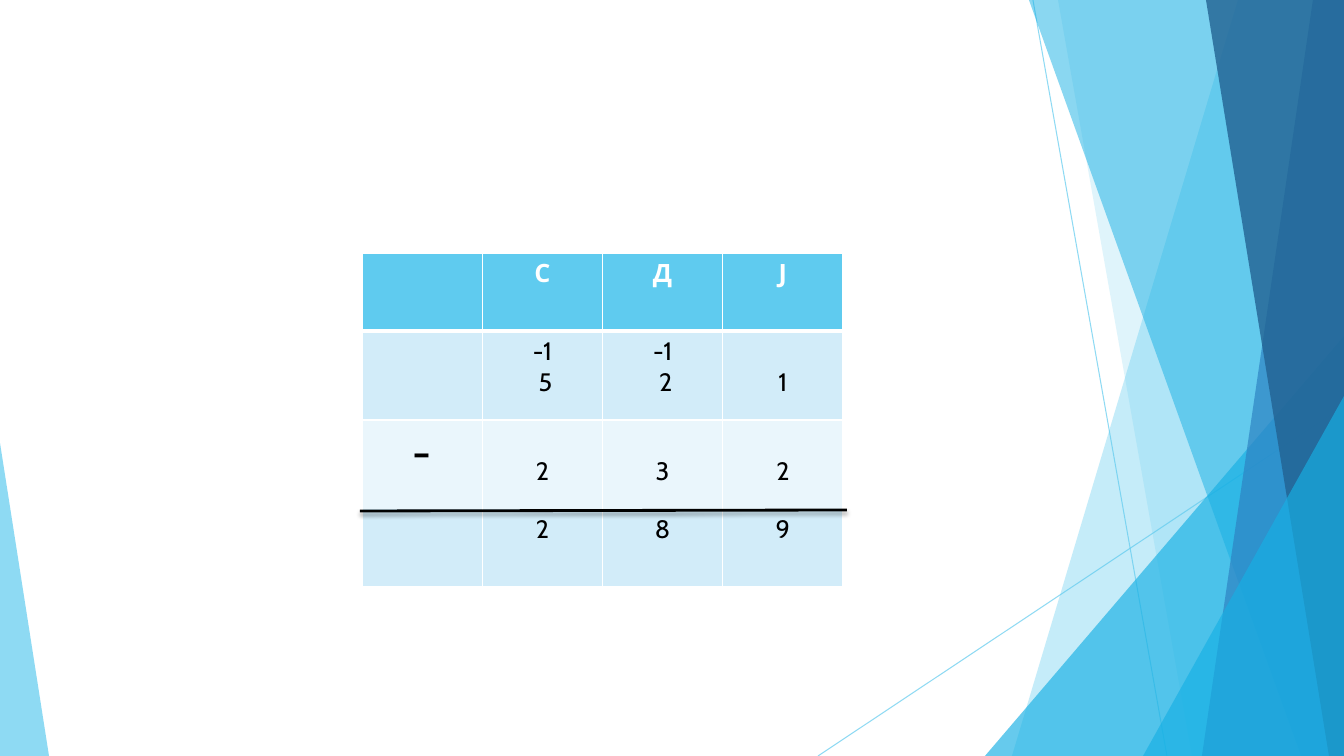
from pptx import Presentation
from pptx.dml.color import RGBColor
from pptx.enum.shapes import MSO_CONNECTOR, MSO_SHAPE
from pptx.enum.text import PP_ALIGN
from pptx.oxml import parse_xml
from pptx.oxml.ns import nsdecls, qn
from pptx.util import Pt
from lxml.etree import SubElement

SCALE = 12192000 / 1344
WIDTH, HEIGHT = 1344, 756
FONT = "Cabin"
COLORS = {
    "sky": "5FCBEF", "cyan": "17B0E4", "blue": "2E83C3", "navy": "226292",
    "band_dark": "D2ECF9", "band_light": "EAF6FC",
    "white": "FFFFFF", "black": "000000",
}

# Facets from back to front: kind, x and y (or top x and bottom x), colour, opacity
FACETS = [
    ("band", 420, 194, "sky", 36),
    ("band", 240, 374, "sky", 20),
    ("triangle", 167, 336, "cyan", 66),
    ("band", 211, 483, "cyan", 50),
    ("band", 495, 384, "blue", 70),
    ("band", 388, 511, "navy", 80),
    ("triangle", 325, 396, "cyan", 66),
]

HEADERS = ["", "С", "Д", "Ј"]
# Each number row: sign, digits, borrowed units, height, fill, lowered by one line
ROWS = [
    (HEADERS, [], 78, "sky", False),
    (["", "5", "2", "1"], ["", "-1", "-1", ""], 89, "band_dark", True),
    (["-", "2", "3", "2"], [], 89, "band_light", True),
    (["", "2", "8", "9"], [], 78, "band_dark", False),
]
# Border widths in points: left, right, top, bottom
BORDERS = [(1, 1, 1, 3), (1, 1, 1, 1), (1, 1, 1, 0), (1, 1, 0, 1)]
LINE_HEIGHT = 31


def px(length):
    return round(length * SCALE)


def rgb(name):
    return RGBColor.from_string(COLORS[name])


def set_opacity(fill_parent, percent):
    color = fill_parent.find(qn("a:solidFill"))[0]
    SubElement(color, qn("a:alpha")).set("val", str(percent * 1000))


def paint(shape, color, opacity):
    shape.shadow.inherit = False
    shape.fill.solid()
    shape.fill.fore_color.rgb = rgb(color)
    set_opacity(shape._element.spPr, opacity)
    shape.line.fill.background()


def add_line(slide, start, end, color, width):
    line = slide.shapes.add_connector(
        MSO_CONNECTOR.STRAIGHT, *map(px, start), *map(px, end))
    line.line.color.rgb = rgb(color)
    line.line.width = Pt(width)
    effects = SubElement(line._element.spPr, qn("a:effectLst"))
    return line, effects


def add_triangle(slide, left, top, width, height, apex, color, opacity):
    triangle = slide.shapes.add_shape(
        MSO_SHAPE.ISOSCELES_TRIANGLE, *map(px, (left, top, width, height)))
    triangle.adjustments[0] = apex
    paint(triangle, color, opacity)


def add_right_facets(slide, left, top, width, height):
    right, bottom = left + width, top + height
    # Thin crossing lines
    for start, end in (((215, 0), (349, height)), ((width, 406), (0, height))):
        line, _ = add_line(slide, (left + start[0], top + start[1]),
                           (left + end[0], top + end[1]), "sky", 0.75)
        set_opacity(line.line._get_or_add_ln(), 70)
    # Translucent bands and triangles
    for kind, first, second, color, opacity in FACETS:
        if kind == "triangle":
            add_triangle(slide, left + first, top + second,
                         width - first, height - second, 1, color, opacity)
            continue
        builder = slide.shapes.build_freeform(px(left + first), px(top))
        corners = [(right, top), (right, bottom), (left + second, bottom)]
        builder.add_line_segments([(px(x), px(y)) for x, y in corners])
        paint(builder.convert_to_shape(), color, opacity)


def set_borders(cell, widths):
    properties = cell._tc.get_or_add_tcPr()
    for side, width in zip("LRTB", widths):
        line = SubElement(properties, qn(f"a:ln{side}"))
        line.set("w", str(Pt(width)))
        if width:
            fill = SubElement(line, qn("a:solidFill"))
            SubElement(fill, qn("a:srgbClr")).set("val", COLORS["white"])
        else:
            SubElement(line, qn("a:noFill"))


def fill_cell(cell, text, borrowed, is_header, lowered):
    cell.text_frame.text = f"{borrowed}\n{text}" if borrowed else text
    if lowered and not borrowed and text != "-":
        cell.margin_top = px(5 + LINE_HEIGHT)
    for paragraph in cell.text_frame.paragraphs:
        paragraph.alignment = PP_ALIGN.CENTER
        for run in paragraph.runs:
            run.font.name = FONT
            run.font.size = Pt(32 if text == "-" else 18)
            run.font.bold = is_header
            run.font.color.rgb = rgb("white" if is_header else "black")
    if borrowed:
        # Nudge the digit slightly right of the borrowed unit
        properties = cell.text_frame.paragraphs[1]._p.get_or_add_pPr()
        properties.set("marL", str(px(6)))


def add_subtraction_table(slide, left, top, width):
    height = sum(row[2] for row in ROWS)
    table = slide.shapes.add_table(
        len(ROWS), len(HEADERS), *map(px, (left, top, width, height))).table
    for column in table.columns:
        column.width = px(width / len(HEADERS))
    for row_index, (texts, borrows, row_height, color, lowered) in enumerate(ROWS):
        table.rows[row_index].height = px(row_height)
        for column_index, text in enumerate(texts):
            cell = table.cell(row_index, column_index)
            set_borders(cell, BORDERS[row_index])
            cell.fill.solid()
            cell.fill.fore_color.rgb = rgb(color)
            borrowed = borrows[column_index] if borrows else ""
            fill_cell(cell, text, borrowed, row_index == 0, lowered)

    # Rule above the result, with a soft shadow
    rule_y = top + height - ROWS[-1][2] + 1
    _, effects = add_line(slide, (left + width + 4, rule_y),
                          (left - 2, rule_y + 1), "black", 2)
    effects.append(parse_xml(
        f'<a:outerShdw {nsdecls("a")} blurRad="{Pt(3)}" dist="{Pt(2)}" '
        f'dir="5400000" rotWithShape="0"><a:srgbClr val="{COLORS["black"]}">'
        '<a:alpha val="35000"/></a:srgbClr></a:outerShdw>'))


def main():
    presentation = Presentation()
    presentation.slide_width, presentation.slide_height = px(WIDTH), px(HEIGHT)
    slide = presentation.slides.add_slide(presentation.slide_layouts[6])
    add_right_facets(slide, 818, 0, WIDTH - 818, HEIGHT)
    # Left corner wedge
    add_triangle(slide, 0, 443, 49, HEIGHT - 443, 0, "sky", 70)
    add_subtraction_table(slide, 362, 253, 481)
    presentation.save("out.pptx")


if __name__ == "__main__":
    main()
